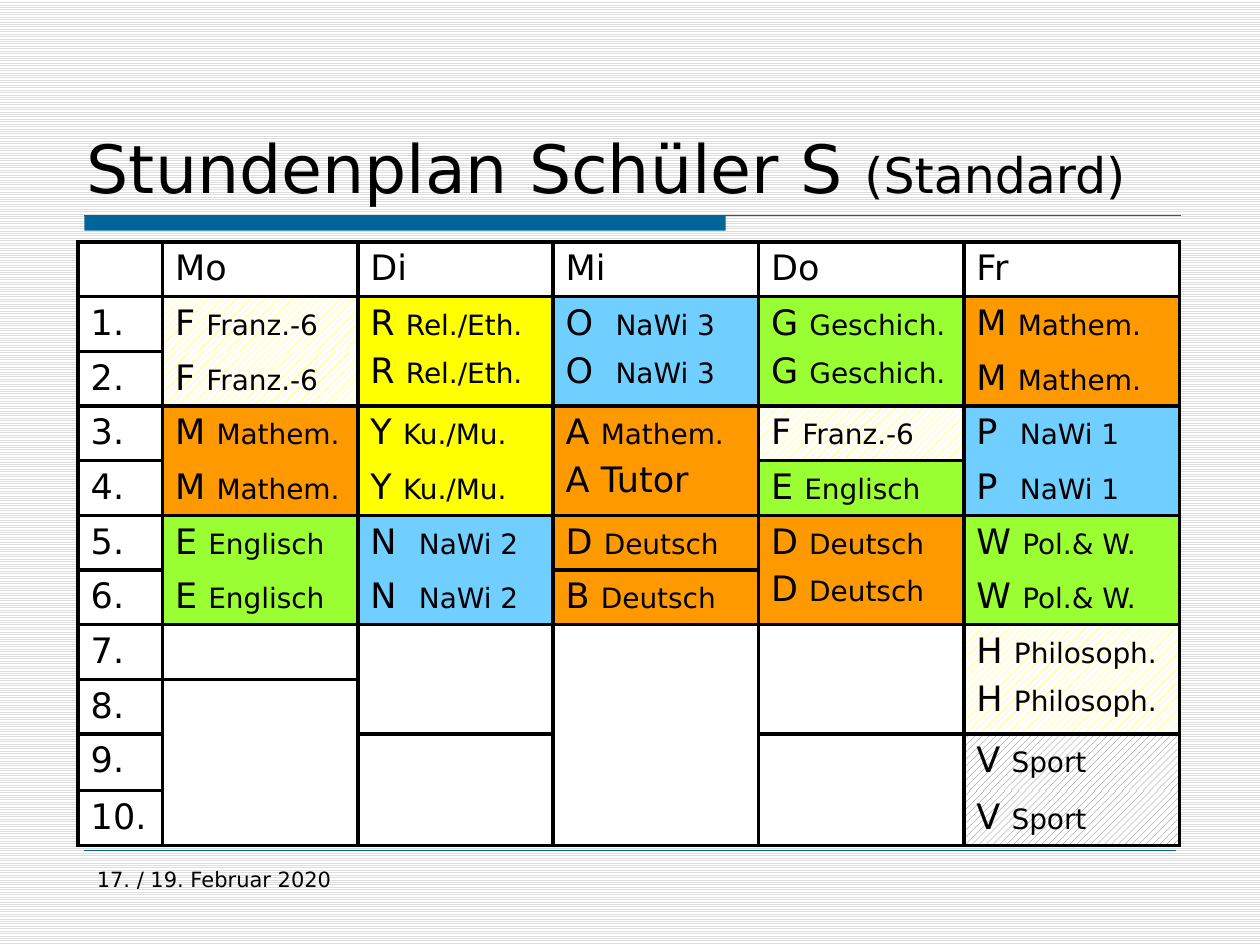
from lxml import etree
from pptx import Presentation, util as u
from pptx.dml.color import RGBColor
from pptx.enum import dml, shapes, text
from pptx.oxml import ns

FONT = "DejaVu Sans"
BLACK = RGBColor(0x00, 0x00, 0x00)
WHITE = RGBColor(0xFF, 0xFF, 0xFF)
TEAL = RGBColor(0x00, 0x66, 0x99)
LIGHT_GREY = RGBColor(0xDD, 0xDD, 0xDD)
GREY = RGBColor(0x6E, 0x6E, 0x6E)
YELLOW = RGBColor(0xFF, 0xFF, 0x00)
BLUE = RGBColor(0x70, 0xCF, 0xFF)
GREEN = RGBColor(0x99, 0xFF, 0x33)
ORANGE = RGBColor(0xFF, 0x99, 0x00)
DIAGONAL = dml.MSO_PATTERN.WIDE_UPWARD_DIAGONAL
YELLOW_HATCH = (DIAGONAL, YELLOW)
GREY_HATCH = (DIAGONAL, GREY)

COLUMN_WIDTHS = [0.67, 1.55, 1.55, 1.63, 1.63, 1.71]
ROW_HEIGHTS = [0.42] * 9 + [0.45, 0.42]

# Each block: rows it covers, how many of them are merged, its lines, its fill.
TIMETABLE = [
    [(1, 1, [], WHITE)] + [(1, 1, [f"{hour}."], WHITE) for hour in range(1, 11)],
    [
        (1, 1, ["Mo"], WHITE),
        (2, 1, ["F |Franz.-6"] * 2, YELLOW_HATCH),
        (2, 1, ["M |Mathem."] * 2, ORANGE),
        (2, 1, ["E |Englisch"] * 2, GREEN),
        (1, 1, [], WHITE),
        (3, 2, [], WHITE),
    ],
    [
        (1, 1, ["Di"], WHITE),
        (2, 2, ["R |Rel./Eth."] * 2, YELLOW),
        (2, 1, ["Y |Ku./Mu."] * 2, YELLOW),
        (2, 1, ["N  |NaWi 2"] * 2, BLUE),
        (2, 1, [], WHITE),
        (2, 1, [], WHITE),
    ],
    [
        (1, 1, ["Mi"], WHITE),
        (2, 2, ["O  |NaWi 3"] * 2, BLUE),
        (2, 2, ["A |Mathem.", "A Tutor"], ORANGE),
        (1, 1, ["D |Deutsch"], ORANGE),
        (1, 1, ["B |Deutsch"], ORANGE),
        (4, 3, [], WHITE),
    ],
    [
        (1, 1, ["Do"], WHITE),
        (2, 2, ["G |Geschich."] * 2, GREEN),
        (1, 1, ["F |Franz.-6"], YELLOW_HATCH),
        (1, 1, ["E |Englisch"], GREEN),
        (2, 2, ["D |Deutsch"] * 2, ORANGE),
        (2, 1, [], WHITE),
        (2, 1, [], WHITE),
    ],
    [
        (1, 1, ["Fr"], WHITE),
        (2, 1, ["M |Mathem."] * 2, ORANGE),
        (2, 1, ["P  |NaWi 1"] * 2, BLUE),
        (2, 1, ["W |Pol.& W."] * 2, GREEN),
        (2, 2, ["H |Philosoph."] * 2, YELLOW_HATCH),
        (2, 1, ["V |Sport"] * 2, GREY_HATCH),
    ],
]


def paint(fill, colour):
    """Apply a solid colour, or a (pattern, colour) pair on white."""
    if isinstance(colour, RGBColor):
        fill.solid()
        fill.fore_color.rgb = colour
        return
    fill.patterned()
    fill.pattern, fill.fore_color.rgb = colour
    fill.back_color.rgb = WHITE


def add_span(para, wording, size):
    """Append one run of black text."""
    span = para.add_run()
    span.text = wording
    for name, value in {"name": FONT, "size": u.Pt(size)}.items():
        setattr(span.font, name, value)
    span.font.color.rgb = BLACK


def add_text(page, box, spans, anchor=text.MSO_ANCHOR.TOP):
    """Place a one-paragraph text box made of (wording, size) spans."""
    frame = page.shapes.add_textbox(*map(u.Inches, box)).text_frame
    for name, value in {"word_wrap": True, "vertical_anchor": anchor}.items():
        setattr(frame, name, value)
    for wording, size in spans:
        add_span(frame.paragraphs[0], wording, size)


def add_rule(page, left, top, width, weight):
    """Draw a horizontal teal line."""
    ends = map(u.Inches, (left, top, left + width, top))
    rule = page.shapes.add_connector(shapes.MSO_CONNECTOR.STRAIGHT, *ends)
    rule.line.color.rgb = TEAL
    rule.line.width = u.Pt(weight)
    etree.SubElement(rule.element.spPr, ns.qn("a:effectLst"))


def add_heading_bar(page, left, top, width, height):
    """Draw the thick bar and the thin rule along its top."""
    box = map(u.Inches, (left, top, 5.09, height))
    bar = page.shapes.add_shape(shapes.MSO_SHAPE.RECTANGLE, *box)
    bar.shadow.inherit = False
    paint(bar.fill, TEAL)
    bar.line.fill.background()
    add_rule(page, left, top, width, 0.75)


def set_borders(cell, top, bottom):
    """Draw the side borders, and the top and bottom ones if asked."""
    sides = {"lnL": True, "lnR": True, "lnT": top, "lnB": bottom}
    properties = cell._tc.get_or_add_tcPr()
    for position, (side, shown) in enumerate(sides.items()):
        border = etree.Element(ns.qn(f"a:{side}"), w=str(u.Pt(2.25)))
        fill = etree.SubElement(border, ns.qn("a:solidFill" if shown else "a:noFill"))
        if shown:
            etree.SubElement(fill, ns.qn("a:srgbClr"), val=str(BLACK))
        properties.insert(position, border)


def write_lines(cell, lines):
    """Write one paragraph per line, with the subject after the bar smaller."""
    frame = cell.text_frame
    for number, line in enumerate(lines):
        para = frame.add_paragraph() if number else frame.paragraphs[0]
        if number:
            para.space_before = u.Pt(4)
        for wording, size in zip(line.split("|"), (20, 16)):
            add_span(para, wording, size)


def fill_block(table, column, first, block):
    """Fill, frame and label the cells of one block of lessons."""
    rows, merged, lines, colour = block
    for offset in range(rows):
        cell = table.cell(first + offset, column)
        depth = merged if offset == 0 else 1
        paint(cell.fill, colour)
        set_borders(cell, offset == 0, offset + depth == rows)
        if merged == 1:
            write_lines(cell, lines[offset:offset + 1])
    if merged > 1:
        origin = table.cell(first, column)
        origin.merge(table.cell(first + merged - 1, column))
        write_lines(origin, lines)


def add_timetable(page, left, top, width, height):
    """Build the weekly timetable column by column."""
    size = len(ROW_HEIGHTS), len(COLUMN_WIDTHS)
    box = map(u.Inches, (left, top, width, height))
    table = page.shapes.add_table(*size, *box).table
    table.first_row = table.horz_banding = False
    for column, breadth in zip(table.columns, COLUMN_WIDTHS):
        column.width = u.Inches(breadth)
    for row, depth in zip(table.rows, ROW_HEIGHTS):
        row.height = u.Inches(depth)
    for column, blocks in enumerate(TIMETABLE):
        first = 0
        for block in blocks:
            fill_block(table, column, first, block)
            first += block[0]


def main():
    """Build and save the timetable slide."""
    deck = Presentation()
    deck.slide_width, deck.slide_height = u.Inches(10), u.Inches(7.5)
    page = deck.slides.add_slide(deck.slide_layouts[6])
    paint(page.background.fill, (dml.MSO_PATTERN.LIGHT_HORIZONTAL, LIGHT_GREY))
    add_heading_bar(page, 0.67, 1.71, 8.7, 0.12)
    add_rule(page, 0.67, 6.75, 8.66, 0.25)
    title = [("Stundenplan Schüler S ", 38), ("(Standard)", 28)]
    add_text(page, (0.59, 0.36, 8.75, 1.33), title, text.MSO_ANCHOR.BOTTOM)
    add_timetable(page, 0.62, 1.92, 8.75, 4.68)
    add_text(page, (0.67, 6.83, 2.17, 0.52), [("17. / 19. Februar 2020", 12)])
    deck.save("out.pptx")


if __name__ == "__main__":
    main()
